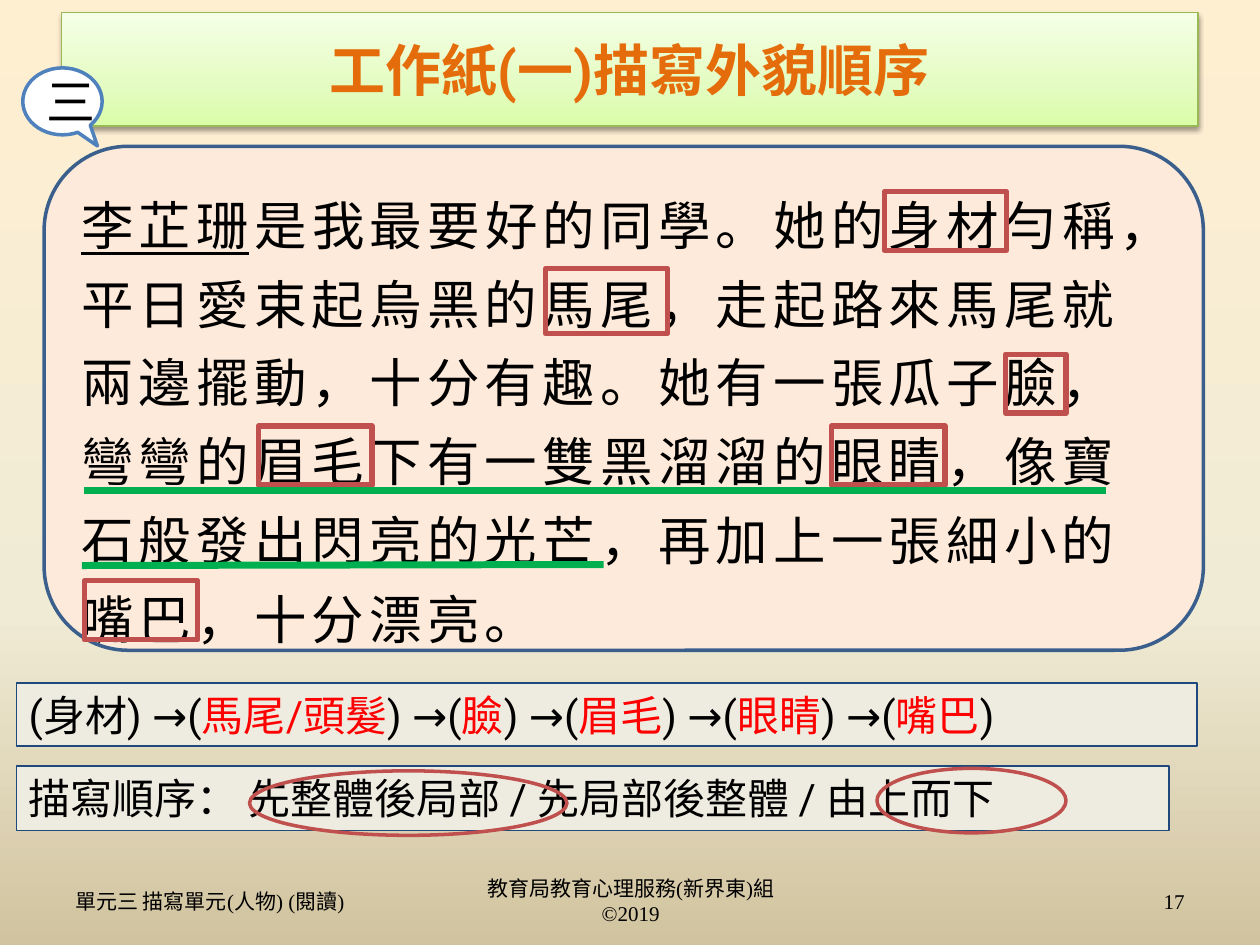
from lxml import etree
from pptx import Presentation
from pptx.dml.color import RGBColor
from pptx.enum.shapes import MSO_CONNECTOR, MSO_SHAPE
from pptx.enum.text import MSO_ANCHOR, MSO_AUTO_SIZE, PP_ALIGN
from pptx.oxml.ns import qn
from pptx.util import Cm, Pt

RECT, ROUND, OVAL = MSO_SHAPE.RECTANGLE, MSO_SHAPE.ROUNDED_RECTANGLE, MSO_SHAPE.OVAL
BUBBLE, LINE = MSO_SHAPE.OVAL_CALLOUT, MSO_CONNECTOR.STRAIGHT
TOP, MID = MSO_ANCHOR.TOP, MSO_ANCHOR.MIDDLE
LEFT, CENTER, RIGHT = PP_ALIGN.LEFT, PP_ALIGN.CENTER, PP_ALIGN.RIGHT
GROW = MSO_AUTO_SIZE.SHAPE_TO_FIT_TEXT
HAN = "Noto Sans CJK SC"

COLORS = {
    "ink": "000000", "answer": "FF0000", "title": "E46C0A", "mark": "C0504D",
    "green": "00B050", "peach": "FDEADA", "frame": "3A5F8C", "cream": "EEECE1",
    "navy": "1F497D", "white": "FFFFFF", "blue": "4F81BD", "leaf": "98B955",
}
SKY = [(0, "FFEFD1"), (65, "F0EBD5"), (100, "D1C39F")]
LIME = [(0, "DAFDA7"), (35, "E4FCC2"), (100, "F5FFE7")]

FORMATS = {
    "story": {"size": Pt(30), "name": "Roboto"},
    "order": {"size": Pt(24), "name": "Roboto"},
    "title": {"size": Pt(32), "name": "Roboto", "bold": True},
    "badge": {"size": Pt(28), "name": HAN},
    "foot": {"size": Pt(12), "name": "Times New Roman"},
}

TITLE = "工作紙(一)描寫外貌順序"
NAME = "李芷珊"
STORY = [
    [NAME, "是我最要好的同學。她的身材勻稱，"],
    ["平日愛束起烏黑的馬尾，走起路來馬尾就"],
    ["兩邊擺動，十分有趣。她有一張瓜子臉，"],
    ["彎彎的眉毛下有一雙黑溜溜的眼睛，像寶石般發出閃亮的光芒，再加上一張細小的嘴巴，十分漂亮。"],
]
FIRST = "身材"
ANSWERS = ["馬尾/頭髮", "臉", "眉毛", "眼睛", "嘴巴"]
CHOICES = ["先整體後局部", "先局部後整體", "由上而下"]

# Left, top, width, height in cm
FEET = [
    (["單元三 描寫單元(人物) (閱讀)"], LEFT, (1.27, 17.65, 7.24, 1.02)),
    (["教育局教育心理服務(新界東)組", None, "©2019"], CENTER, (8.69, 17.65, 8.05, 1.02)),
    (["17"], RIGHT, (18.21, 17.65, 5.92, 1.02)),
]
BOXES = [
    (17.83, 3.86, 2.46, 1.19), (11, 5.41, 2.46, 1.32), (20.27, 7.14, 1.22, 1.19),
    (5.21, 8.59, 2.29, 1.19), (16.76, 8.59, 2.29, 1.19), (1.7, 11.71, 2.29, 1.19),
]
RINGS = [(5.03, 15.54, 6.4, 1.3), (17.68, 15.49, 3.81, 1.3)]
RULES = [(1.7, 9.88, 22.3, 9.88), (1.65, 11.4, 12.17, 11.38)]  # x1, y1, x2, y2


def rgb(key):
    return RGBColor.from_string(COLORS[key])


def blend(fill, root, stops, angle):
    """Give a gradient with any number of stops, angle clockwise."""
    fill.gradient()
    fill.gradient_angle = 360 - angle
    band = root.find(".//" + qn("a:gsLst"))
    for old in list(band):
        band.remove(old)
    for pos, hue in stops:
        stop = etree.SubElement(band, qn("a:gs"), pos=str(pos * 1000))
        etree.SubElement(stop, qn("a:srgbClr"), val=hue)


def outline(line, hue, width):
    line.color.rgb = rgb(hue)
    line.width = Pt(width)


def draw(kind, place, hue, width, fill=None):
    shape = slide.shapes.add_shape(kind, *map(Cm, place))
    shape.shadow.inherit = False
    if fill:
        shape.fill.solid()
        shape.fill.fore_color.rgb = rgb(fill)
    else:
        shape.fill.background()
    outline(shape.line, hue, width)
    return shape


def write(shape, lines, style, align=LEFT, anchor=TOP, hue="ink"):
    """Fill paragraphs with runs: text, (text, colour), or None for a break."""
    frame = shape.text_frame
    frame.word_wrap = True
    frame.vertical_anchor = anchor
    for i, parts in enumerate(lines):
        para = frame.add_paragraph() if i else frame.paragraphs[0]
        para.alignment = align
        for part in parts:
            if part is None:
                para.add_line_break()
                continue
            text, tint = part if isinstance(part, tuple) else (part, hue)
            run = para.add_run()
            run.text = text
            for key, value in FORMATS[style].items():
                setattr(run.font, key, value)
            run.font.color.rgb = rgb(tint)
            etree.SubElement(run.font._element, qn("a:ea"), typeface=HAN)
    return frame


deck = Presentation()
deck.slide_width, deck.slide_height = Cm(25.4), Cm(19.05)
slide = deck.slides.add_slide(deck.slide_layouts[6])
blend(slide.background.fill, slide.element, SKY, 90)

# Story
panel = draw(ROUND, (0.89, 2.95, 23.37, 10.16), "frame", 2, "peach")
for para in write(panel, STORY, "story").paragraphs:
    para.line_spacing = Pt(45)
    for run in para.runs:
        run.font.underline = run.text == NAME
        run.font._element.set("spc", "300")

# Footer
for parts, align, place in FEET:
    write(slide.shapes.add_textbox(*map(Cm, place)), [parts], "foot", align, MID)

# Order of description
chain = [f"({FIRST}) →("]
for word in ANSWERS:
    chain += [(word, "answer"), ") →("]
chain[-1] = ")"
rows = [
    (chain, (0.33, 13.77, 23.8, 1.27)),
    (["描寫順序： " + " / ".join(CHOICES)], (0.33, 15.44, 23.24, 1.3)),
]
for parts, place in rows:
    bar = draw(RECT, place, "navy", 0.75, "cream")
    write(bar, [parts], "order").auto_size = GROW

# Marks on the text
for place in BOXES:
    draw(RECT, place, "mark", 3)
for place in RINGS:
    draw(OVAL, place, "mark", 2)
for ends in RULES:
    rule = slide.shapes.add_connector(LINE, *map(Cm, ends))
    outline(rule.line, "green", 4)
    etree.SubElement(rule._element.spPr, qn("a:effectLst"))

# Title and badge
banner = draw(RECT, (1.24, 0.25, 22.91, 2.29), "leaf", 0.75)
blend(banner.fill, banner._element, LIME, 270)
effects = banner._element.spPr.find(qn("a:effectLst"))
shade = etree.SubElement(effects, qn("a:outerShdw"), blurRad=str(Pt(3.1)),
                         dist=str(Pt(1.6)), dir="5400000", rotWithShape="0")
tone = etree.SubElement(shade, qn("a:srgbClr"), val=COLORS["ink"])
etree.SubElement(tone, qn("a:alpha"), val="38000")
write(banner, [[TITLE]], "title", CENTER, MID, "title")

badge = draw(BUBBLE, (0.46, 1.37, 1.6, 1.35), "blue", 2, "white")
badge.adjustments[0], badge.adjustments[1] = 0.44, 0.665
write(badge, [["三"]], "badge", CENTER, MID)

deck.save("out.pptx")
